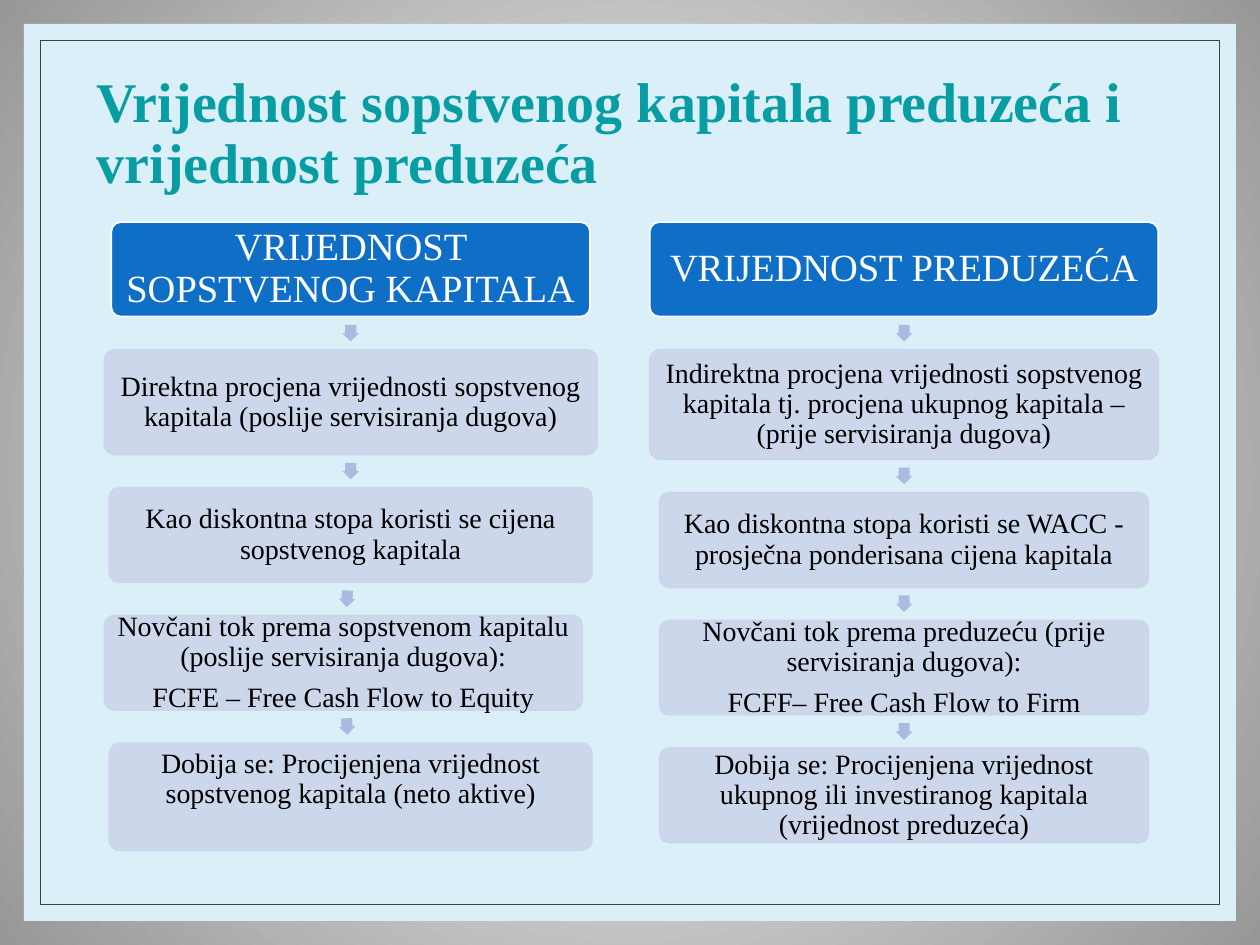
import math

import pptx
import pptx.util
import pptx.dml.color
import pptx.enum.shapes
import pptx.enum.text
import pptx.oxml
import pptx.oxml.ns

Pt = pptx.util.Pt
SHAPE = pptx.enum.shapes.MSO_SHAPE
ALIGN = pptx.enum.text.PP_ALIGN
ANCHOR = pptx.enum.text.MSO_ANCHOR
qn = pptx.oxml.ns.qn
NS = pptx.oxml.ns.nsdecls("a")

# Content: each step is (paragraphs, centre x, width, height, bottom inset)
TITLE = ["Vrijednost sopstvenog kapitala preduzeća i", "vrijednost preduzeća"]
COLUMNS = [
    [
        (["VRIJEDNOST SOPSTVENOG KAPITALA"], 200.4, 273.6, 54, 3),
        (["Direktna procjena vrijednosti sopstvenog kapitala "
          "(poslije servisiranja dugova)"], 200.4, 281.5, 59.8, 2),
        (["Kao diskontna stopa koristi se cijena sopstvenog kapitala"],
         200.4, 275.8, 54, 2),
        (["Novčani tok prema sopstvenom kapitalu (poslije servisiranja dugova):",
          "FCFE – Free Cash Flow to Equity"], 196.2, 273, 54, 2),
        (["Dobija se: Procijenjena vrijednost sopstvenog kapitala (neto aktive)"],
         200.4, 275.8, 61.2, 22),
    ],
    [
        (["VRIJEDNOST PREDUZEĆA"], 516.6, 290.6, 54, 3),
        (["Indirektna procjena vrijednosti sopstvenog kapitala tj. procjena "
          "ukupnog kapitala – (prije servisiranja dugova)"], 516.6, 290.6, 62.6, 2),
        (["Kao diskontna stopa koristi se WACC - prosječna ponderisana "
          "cijena kapitala"], 516.6, 279.4, 54, 2),
        (["Novčani tok prema preduzeću (prije servisiranja dugova):",
          "FCFF– Free Cash Flow to Firm"], 516.6, 279.4, 54, 2),
        (["Dobija se: Procijenjena vrijednost ukupnog ili investiranog kapitala "
          "(vrijednost preduzeća)"], 516.6, 279.4, 54, 2),
    ],
]

COLORS = {
    "glow": "FFFFFF", "edge": "979797", "panel": "DBEFF9", "frame": "404040",
    "title": "089CA3", "head": "0F6FC6", "head_line": "FFFFFF",
    "head_text": "FFFFFF", "step": "CCD5EA", "step_text": "000000",
    "arrow": "ABBBDF",
}
FONT = "Times New Roman"
TOP, GAP, ARROW = 126.9, 19, 9.5
TITLE_FORMAT = {"size": Pt(32), "bold": True, "name": FONT}
HEAD_FORMAT = {"size": Pt(22), "name": FONT}
STEP_FORMAT = {"size": Pt(16), "name": FONT}


def rgb(key):
    return pptx.dml.color.RGBColor.from_string(COLORS[key])


def add_block(kind, left, top, width, height, fill=None, line=None, weight=1):
    block = slide.shapes.add_shape(kind, Pt(left), Pt(top), Pt(width), Pt(height))
    block.shadow.inherit = False
    if fill:
        block.fill.solid()
        block.fill.fore_color.rgb = rgb(fill)
    else:
        block.fill.background()
    if line:
        block.line.color.rgb = rgb(line)
        block.line.width = Pt(weight)
    else:
        block.line.fill.background()
    return block


def write(frame, paragraphs, color, font_format, align, insets, after=0):
    frame.word_wrap = True
    frame.vertical_anchor = ANCHOR.MIDDLE
    for side, inset in zip(("left", "top", "right", "bottom"), insets):
        setattr(frame, f"margin_{side}", Pt(inset))
    for i, text in enumerate(paragraphs):
        paragraph = frame.paragraphs[0] if i == 0 else frame.add_paragraph()
        paragraph.text = text
        paragraph.alignment = align
        paragraph.line_spacing = 0.9
        paragraph.space_after = Pt(after)
        for name, value in font_format.items():
            setattr(paragraph.font, name, value)
        paragraph.font.color.rgb = rgb(color)


deck = pptx.Presentation()
deck.slide_width, deck.slide_height = Pt(720), Pt(540)
slide = deck.slides.add_slide(deck.slide_layouts[6])

# Background: round gradient from the centre
backdrop = slide.background.fill
backdrop.gradient()
for stop, key in zip(backdrop.gradient_stops, ("glow", "edge")):
    stop.color.rgb = rgb(key)
    stop.position = 0 if key == "glow" else 1
direction = next(slide.element.iter(qn("a:lin")))
direction.getparent().replace(direction, pptx.oxml.parse_xml(
    f'<a:path {NS} path="circle">'
    '<a:fillToRect l="50000" t="50000" r="50000" b="50000"/></a:path>'))

# Panel and frame
add_block(SHAPE.RECTANGLE, 13.7, 13.7, 692.6, 512.6, fill="panel")
add_block(SHAPE.RECTANGLE, 23, 23, 674, 494, line="frame", weight=0.5)

# Title
title = slide.shapes.add_textbox(Pt(48.2), Pt(43.2), Pt(614.2), Pt(67.7))
write(title.text_frame, ["\v".join(TITLE)], "title", TITLE_FORMAT,
      ALIGN.LEFT, (7.2, 3.6, 7.2, 3.6))

# Columns of steps, with an arrow in each gap
for column in COLUMNS:
    top, previous = TOP, None
    for paragraphs, center, width, height, bottom in column:
        is_head = previous is None
        middle = top + height / 2
        if not is_head:
            arrow = add_block(SHAPE.RIGHT_ARROW,
                              (previous[0] + center - ARROW) / 2,
                              top - (GAP + ARROW) / 2, ARROW, ARROW, fill="arrow")
            arrow.adjustments[0] = 0.667
            arrow.rotation = math.degrees(
                math.atan2(middle - previous[1], center - previous[0]))
        step = add_block(SHAPE.ROUNDED_RECTANGLE, center - width / 2, top,
                         width, height, fill="head" if is_head else "step",
                         line="head_line" if is_head else "step")
        step.adjustments[0] = 0.1
        if not is_head:
            for tint in step.element.spPr.iter(qn("a:srgbClr")):
                tint.append(pptx.oxml.parse_xml(f'<a:alpha {NS} val="90000"/>'))
        inset = 3 if is_head else 2
        write(step.text_frame, paragraphs,
              "head_text" if is_head else "step_text",
              HEAD_FORMAT if is_head else STEP_FORMAT,
              ALIGN.CENTER, (inset, inset, inset, bottom), after=6)
        previous = center, middle
        top += height + GAP

deck.save("out.pptx")
